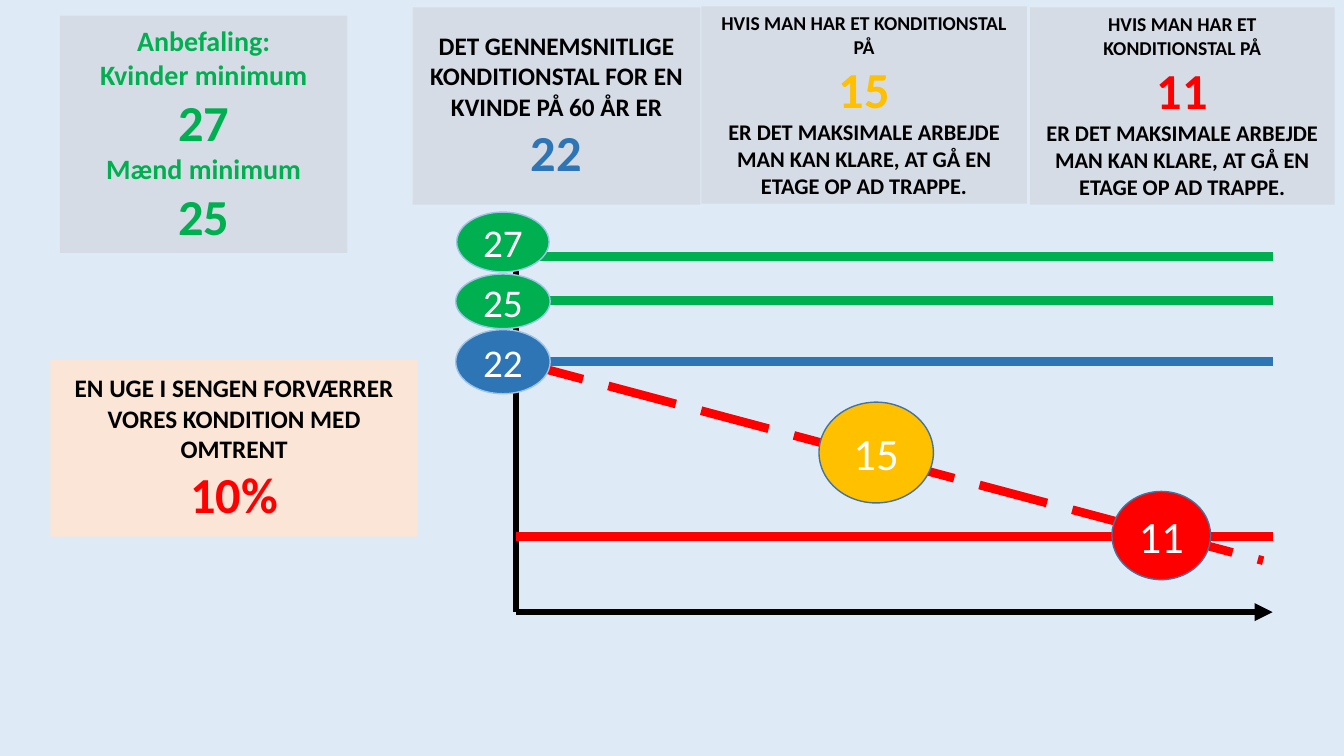
from dataclasses import dataclass

from lxml.etree import SubElement
from pptx import Presentation
from pptx.dml.color import RGBColor
from pptx.enum.dml import MSO_LINE
from pptx.enum.shapes import MSO_CONNECTOR, MSO_SHAPE
from pptx.enum.text import MSO_ANCHOR, PP_ALIGN
from pptx.oxml.ns import qn
from pptx.util import Emu, Pt

PX = 9525
FONT = "Calibri"
BLACK = RGBColor(0x00, 0x00, 0x00)
WHITE = RGBColor(0xFF, 0xFF, 0xFF)
RED = RGBColor(0xFF, 0x00, 0x00)
GREEN = RGBColor(0x00, 0xB0, 0x50)
BLUE = RGBColor(0x2E, 0x75, 0xB6)
AMBER = RGBColor(0xFF, 0xC0, 0x00)
GREY = RGBColor(0xD6, 0xDC, 0xE5)
PEACH = RGBColor(0xFB, 0xE5, 0xD6)
PALE_BLUE = RGBColor(0xDE, 0xEB, 0xF7)
LIGHT_EDGE = RGBColor(0x9D, 0xC3, 0xE6)
DARK_EDGE = RGBColor(0x43, 0x73, 0x9E)

AXIS_X, AXIS_Y, AXIS_RIGHT, AXIS_TOP = 491, 583, 1212, 205
AVERAGE_Y = 344


@dataclass(frozen=True)
class Run:
    text: str
    size: int
    color: RGBColor = BLACK


@dataclass(frozen=True)
class Box:
    x: int
    y: int
    w: int
    h: int
    fill: RGBColor
    paragraphs: list[list[Run]]


@dataclass(frozen=True)
class Line:
    x1: int
    y1: int
    x2: int
    y2: int
    color: RGBColor
    width: float = 6.25
    arrow: bool = False
    dashed: bool = False


@dataclass(frozen=True)
class Marker:
    x: int
    y: int
    w: int
    h: int
    value: str
    size: int
    fill: RGBColor
    edge: RGBColor


def stair_text(value: str, color: RGBColor) -> list[list[Run]]:
    return [
        [Run("HVIS MAN HAR ET KONDITIONSTAL PÅ", 14)],
        [Run(value, 36, color)],
        [Run("ER DET MAKSIMALE ARBEJDE MAN KAN KLARE, AT GÅ EN ETAGE OP AD TRAPPE.", 16)],
    ]


BOXES = [
    Box(393, 7, 274, 188, GREY, [[
        Run("DET GENNEMSNITLIGE KONDITIONSTAL FOR EN KVINDE PÅ 60 ÅR ER ", 18),
        Run("22", 36, BLUE),
    ]]),
    Box(668, 6, 310, 188, GREY, stair_text("15", AMBER)),
    Box(981, 7, 290, 188, GREY, stair_text("11", RED)),
    Box(48, 343, 350, 168, PEACH, [
        [Run("EN UGE I SENGEN FORVÆRRER VORES KONDITION MED OMTRENT", 18)],
        [Run("10%", 36, RED)],
    ]),
    Box(57, 15, 274, 226, GREY, [
        [Run("Anbefaling:", 20, GREEN)],
        [Run("Kvinder minimum", 20, GREEN)],
        [Run("27", 36, GREEN)],
        [Run("Mænd minimum", 20, GREEN)],
        [Run("25", 36, GREEN)],
    ]),
]

LEVELS = [(511, RED), (AVERAGE_Y, BLUE), (286, GREEN), (244, GREEN)]
LINES = [
    Line(AXIS_X, AXIS_Y, AXIS_RIGHT, AXIS_Y, BLACK, 4.25, arrow=True),
    Line(AXIS_X, AXIS_Y, AXIS_X, AXIS_TOP, BLACK, 4.25, arrow=True),
    *(Line(AXIS_X, y, AXIS_RIGHT, y, color) for y, color in LEVELS),
    Line(AXIS_X, AVERAGE_Y, 1203, 534, RED, dashed=True),
]

MARKERS = [
    Marker(434, 261, 90, 52, "25", 28, GREEN, LIGHT_EDGE),
    Marker(435, 202, 88, 57, "27", 28, GREEN, LIGHT_EDGE),
    Marker(1059, 468, 94, 84, "11", 32, RED, DARK_EDGE),
    Marker(780, 383, 109, 96, "15", 32, AMBER, DARK_EDGE),
    Marker(434, 314, 90, 61, "22", 28, BLUE, LIGHT_EDGE),
]


def px(value: int) -> Emu:
    return Emu(value * PX)


def add_text(p, text: str, *, size: int, color: RGBColor, bold: bool = False) -> None:
    r = p.add_run()
    r.text = text
    r.font.name = FONT
    r.font.size = Pt(size)
    r.font.bold = bold
    r.font.color.rgb = color


def add_filled(slide, kind: MSO_SHAPE, item: Box | Marker):
    sp = slide.shapes.add_shape(kind, px(item.x), px(item.y), px(item.w), px(item.h))
    sp.shadow.inherit = False
    sp.fill.solid()
    sp.fill.fore_color.rgb = item.fill
    sp.text_frame.word_wrap = True
    sp.text_frame.vertical_anchor = MSO_ANCHOR.MIDDLE
    return sp


def draw_box(slide, box: Box) -> None:
    sp = add_filled(slide, MSO_SHAPE.RECTANGLE, box)
    sp.line.fill.background()
    tf = sp.text_frame
    for i, runs in enumerate(box.paragraphs):
        p = tf.add_paragraph() if i else tf.paragraphs[0]
        p.alignment = PP_ALIGN.CENTER
        for run in runs:
            add_text(p, run.text, size=run.size, color=run.color, bold=True)


def draw_line(slide, line: Line) -> None:
    cxn = slide.shapes.add_connector(
        MSO_CONNECTOR.STRAIGHT, px(line.x1), px(line.y1), px(line.x2), px(line.y2))
    cxn.line.color.rgb = line.color
    cxn.line.width = Pt(line.width)
    if line.dashed:
        cxn.line.dash_style = MSO_LINE.LONG_DASH
    if line.arrow:
        SubElement(cxn.line.fill._xPr, qn("a:tailEnd"), type="triangle")
    SubElement(cxn._element.spPr, qn("a:effectLst"))


def draw_marker(slide, marker: Marker) -> None:
    sp = add_filled(slide, MSO_SHAPE.FLOWCHART_CONNECTOR, marker)
    sp.line.color.rgb = marker.edge
    sp.line.width = Pt(1)
    p = sp.text_frame.paragraphs[0]
    p.alignment = PP_ALIGN.CENTER
    add_text(p, marker.value, size=marker.size, color=WHITE)


def main() -> None:
    prs = Presentation()
    prs.slide_width, prs.slide_height = px(1280), px(720)
    slide = prs.slides.add_slide(prs.slide_layouts[6])
    slide.background.fill.solid()
    slide.background.fill.fore_color.rgb = PALE_BLUE
    for box in BOXES:
        draw_box(slide, box)
    for line in LINES:
        draw_line(slide, line)
    for marker in MARKERS:
        draw_marker(slide, marker)
    prs.save("out.pptx")


if __name__ == "__main__":
    main()
